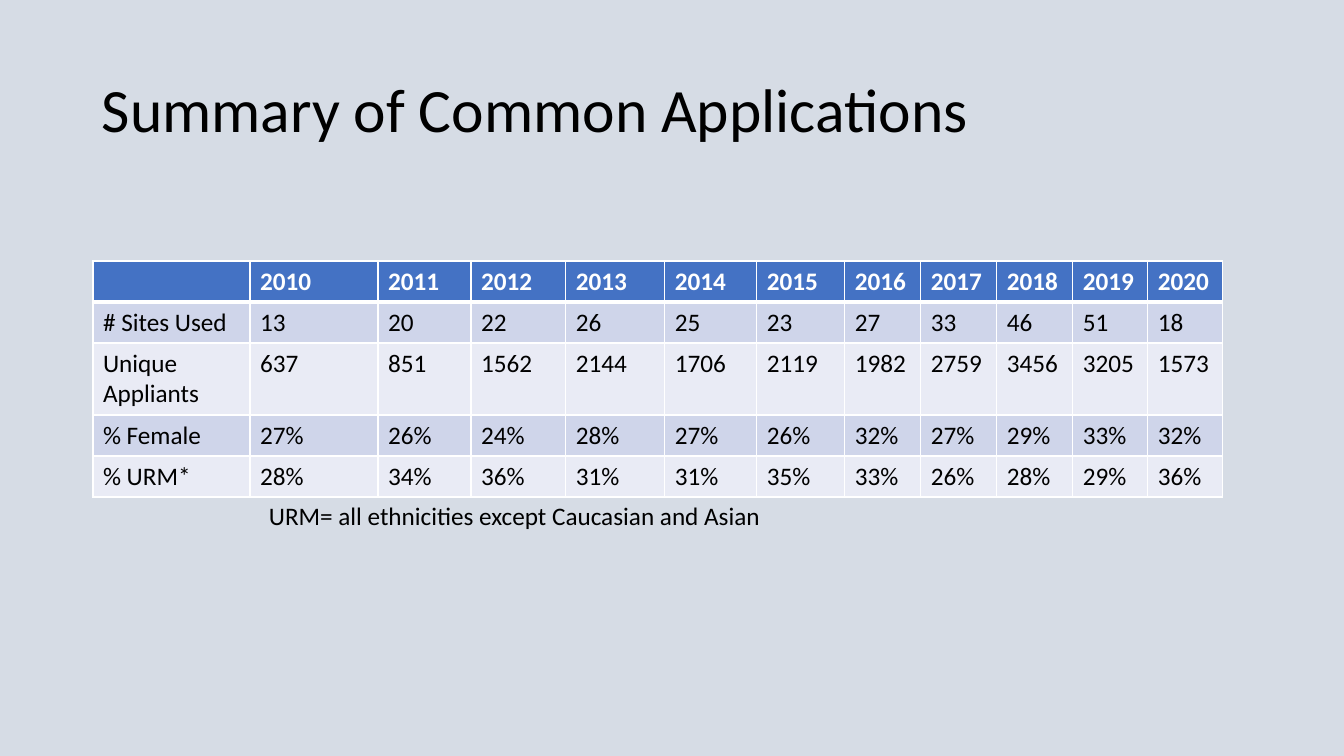
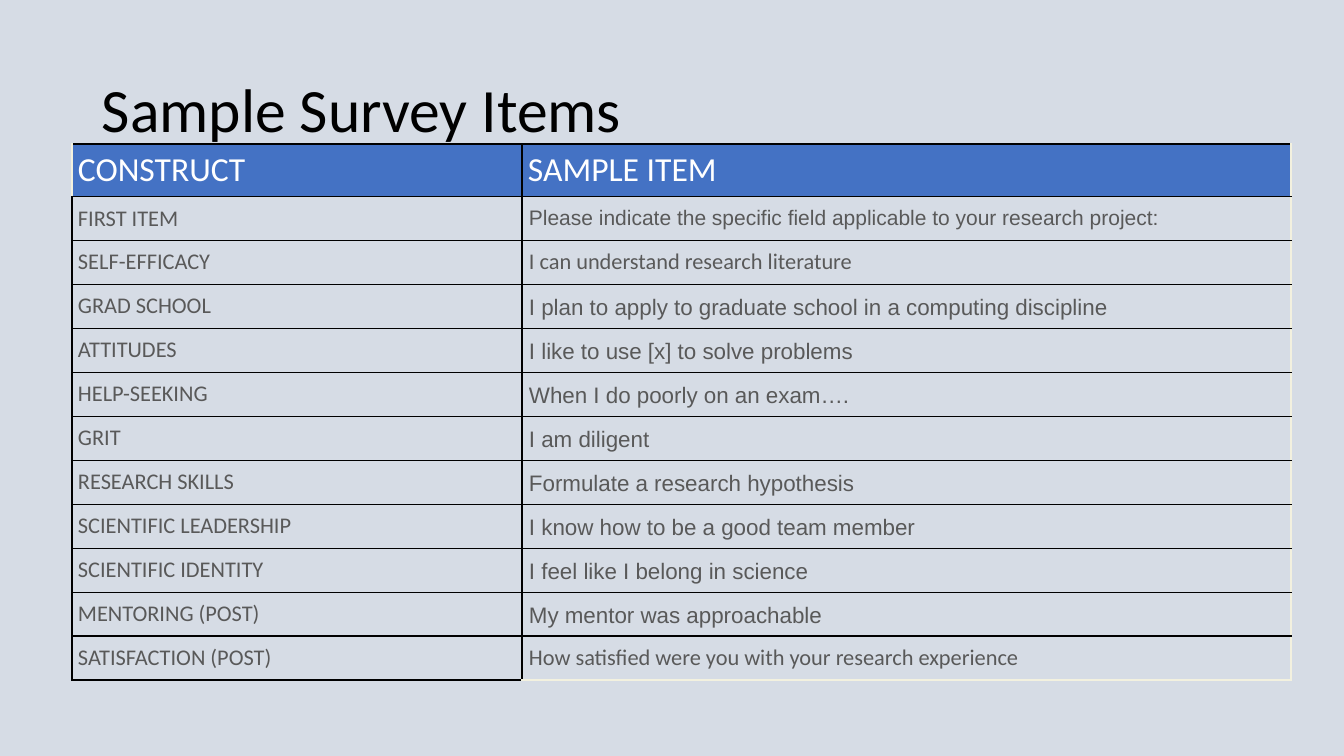
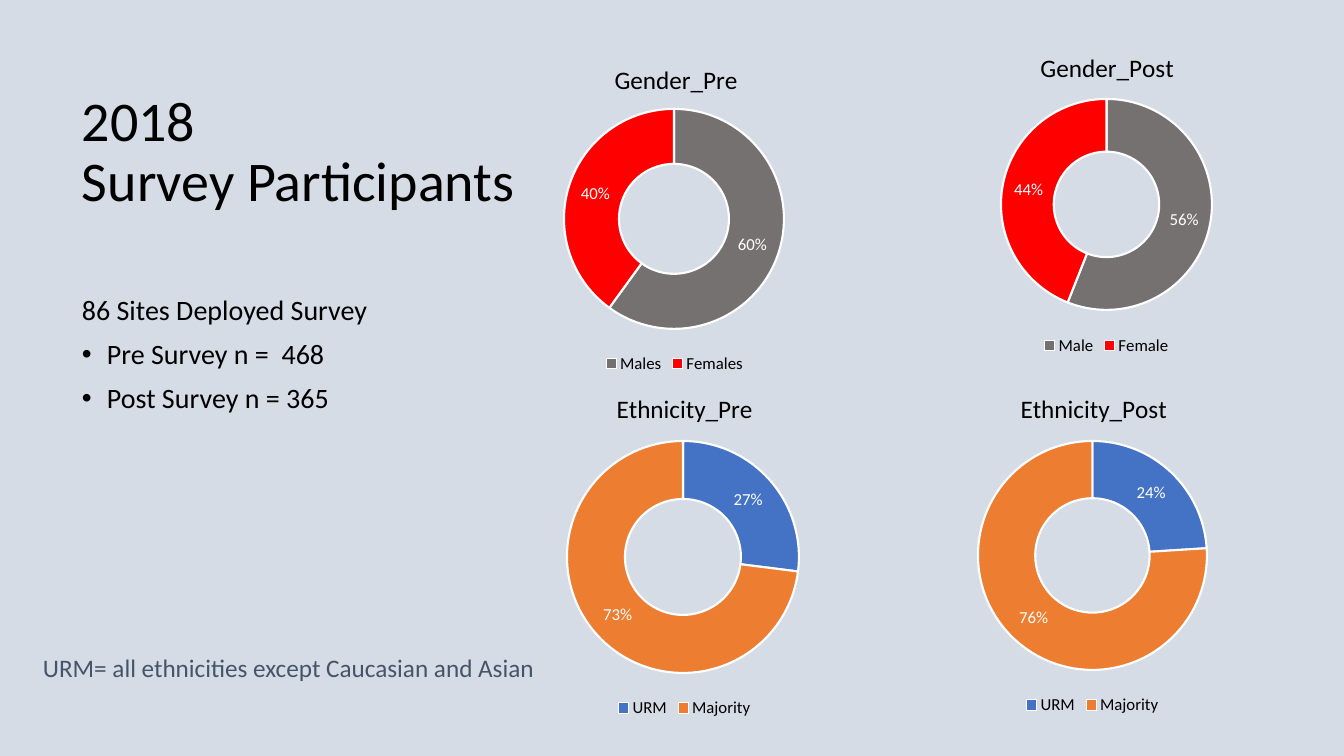
from lxml.etree import SubElement
from pptx import Presentation
from pptx.chart.data import CategoryChartData as ChartData
from pptx.dml.color import RGBColor
from pptx.enum.chart import XL_CHART_TYPE as ChartType, XL_LEGEND_POSITION as LegendPosition
from pptx.enum.text import MSO_ANCHOR as Anchor
from pptx.oxml.ns import qn
from pptx.util import Pt

EMU_PER_PX = 914400 / 100.8
BACKGROUND = RGBColor(0xD6, 0xDC, 0xE5)
BLACK = RGBColor(0, 0, 0)
WHITE = RGBColor(0xFF, 0xFF, 0xFF)
BLUE = RGBColor(0x44, 0x72, 0xC4)
ORANGE = RGBColor(0xED, 0x7D, 0x31)
RED = RGBColor(0xFF, 0, 0)
GRAY = RGBColor(0x76, 0x71, 0x71)
DARK_GRAY = RGBColor(0x59, 0x59, 0x59)
SLATE = RGBColor(0x44, 0x54, 0x6A)
CREAM = RGBColor(0xF3, 0xF1, 0xDF)
BANDS = (RGBColor(0xCF, 0xD5, 0xEA), RGBColor(0xE9, 0xEB, 0xF5))

FONT = "Calibri"
TITLE_BOX = (92, 40, 1159, 146)
URM_NOTE = "URM= all ethnicities except Caucasian and Asian"

SUMMARY_COLUMNS = (157, 128, 93, 95, 99, 92, 88, 76, 76, 76, 75, 75)
SUMMARY_HEIGHTS = (41, 41, 72, 41, 41)
SUMMARY_ROWS = (
    ("", *range(2010, 2021)),
    ("# Sites Used", 13, 20, 22, 26, 25, 23, 27, 33, 46, 51, 18),
    ("Unique Appliants", 637, 851, 1562, 2144, 1706, 2119, 1982, 2759, 3456, 3205, 1573),
    ("% Female", "27%", "26%", "24%", "28%", "27%", "26%", "32%", "27%", "29%", "33%", "32%"),
    ("% URM*", "28%", "34%", "36%", "31%", "31%", "35%", "33%", "26%", "28%", "29%", "36%"),
)

PLAIN = {"size": 16}
ARIAL = {"size": 16, "name": "Arial", "line_spacing": 1.1}
SMALL_ARIAL = {"size": 15, "name": "Arial"}
SURVEY_ITEMS = (
    ("FIRST ITEM", "Please indicate the specific field applicable to your research project:", SMALL_ARIAL),
    ("SELF-EFFICACY", "I can understand research literature", PLAIN),
    ("GRAD SCHOOL", "I plan to apply to graduate school in a computing discipline", ARIAL),
    ("ATTITUDES", "I like to use [x] to solve problems", ARIAL),
    ("HELP-SEEKING", "When I do poorly on an exam….", ARIAL),
    ("GRIT", "I am diligent", ARIAL),
    ("RESEARCH SKILLS", "Formulate a research hypothesis", ARIAL),
    ("SCIENTIFIC LEADERSHIP", "I know how to be a good team member", ARIAL),
    ("SCIENTIFIC IDENTITY", "I feel like I belong in science", ARIAL),
    ("MENTORING (POST)", "My mentor was approachable", ARIAL),
    ("SATISFACTION (POST)", "How satisfied were you with your research experience", PLAIN),
)

GENDER_COLORS = (GRAY, RED)
ETHNICITY_COLORS = (BLUE, ORANGE)
DOUGHNUTS = (
    ("Gender_Pre", (509, 40, 331, 338), (610, 58), (564, 109, 220), ("Males", "Females"), (60, 40), GENDER_COLORS),
    ("Gender_Post", (895, 25, 423, 335), (1036, 46), (1001, 99, 211), ("Male", "Female"), (56, 44), GENDER_COLORS),
    ("Ethnicity_Pre", (446, 366, 477, 356), (612, 387), (567, 441, 232), ("URM", "Majority"), (27, 73), ETHNICITY_COLORS),
    ("Ethnicity_Post", (854, 366, 477, 353), (1016, 387), (978, 441, 229), ("URM", "Majority"), (24, 76), ETHNICITY_COLORS),
)


def px(length):
    return round(length * EMU_PER_PX)


def px_box(box):
    return [px(length) for length in box]


def set_attributes(target, values):
    for name, value in values.items():
        setattr(target, name, value)


def format_font(font, size, color, name=FONT, bold=False):
    set_attributes(font, {"size": Pt(size), "name": name, "bold": bold})
    font.color.rgb = color


def write_paragraph(paragraph, text, size, color, name=FONT, bold=False, **spacing):
    paragraph.text = text
    set_attributes(paragraph, spacing)
    for run in paragraph.runs:
        format_font(run.font, size, color, name, bold)


def add_bullet(paragraph, indent):
    properties = paragraph._p.get_or_add_pPr()
    properties.set("marL", str(px(indent)))
    properties.set("indent", str(-px(indent)))
    SubElement(properties, qn("a:buFont"), typeface="Arial")
    SubElement(properties, qn("a:buChar"), char="•")


def add_text(slide, box, text, size, color=BLACK, anchor=Anchor.TOP, **spacing):
    frame = slide.shapes.add_textbox(*px_box(box)).text_frame
    set_attributes(frame, {"word_wrap": True, "vertical_anchor": anchor})
    write_paragraph(frame.paragraphs[0], text, size, color, **spacing)
    return frame


def add_title(slide, text, box=TITLE_BOX, size=44, anchor=Anchor.MIDDLE):
    add_text(slide, box, text, size, anchor=anchor, line_spacing=0.9)


def add_table(slide, left, top, widths, heights):
    box = px_box((left, top, sum(widths), sum(heights)))
    table = slide.shapes.add_table(len(heights), len(widths), *box).table
    set_attributes(table, {"first_row": False, "horz_banding": False})
    for column, width in zip(table.columns, widths):
        column.width = px(width)
    for row, height in zip(table.rows, heights):
        row.height = px(height)
    return table


def set_borders(cell, **borders):
    properties = cell._tc.get_or_add_tcPr()
    for side in "LRTB":
        color, width = borders[side]
        line = SubElement(properties, qn(f"a:ln{side}"), w=str(Pt(width)))
        fill = SubElement(line, qn("a:solidFill"))
        SubElement(fill, qn("a:srgbClr"), val=str(color))


def set_fill(cell, color):
    if color is None:
        cell.fill.background()
    else:
        cell.fill.solid()
        cell.fill.fore_color.rgb = color


def set_layout(parent, index, chart_box, **places):
    for layout in parent.findall(qn("c:layout")):
        parent.remove(layout)
    layout = SubElement(parent, qn("c:layout"))
    parent.insert(index, layout)
    manual = SubElement(layout, qn("c:manualLayout"))
    if "w" in places:
        SubElement(manual, qn("c:layoutTarget"), val="inner")
    for mode in ("xMode", "yMode"):
        SubElement(manual, qn(f"c:{mode}"), val="edge")
    left, top, width, height = chart_box
    offsets = {"x": left, "y": top, "w": 0, "h": 0}
    spans = {"x": width, "y": height, "w": width, "h": height}
    for key, value in places.items():
        share = (value - offsets[key]) / spans[key]
        SubElement(manual, qn(f"c:{key}"), val=f"{share:.4f}")


def add_doughnut(slide, title, box, title_place, ring, categories, values, colors):
    data = ChartData()
    data.categories = categories
    data.add_series("Series 1", values)
    chart = slide.shapes.add_chart(ChartType.DOUGHNUT, *px_box(box), data).chart
    format_font(chart.font, 10, WHITE)

    chart.has_title = True
    write_paragraph(chart.chart_title.text_frame.paragraphs[0], title, 18, BLACK)
    title_left, title_top = title_place
    set_layout(chart.chart_title._element, 1, box, x=title_left, y=title_top)

    chart.has_legend = True
    set_attributes(chart.legend, {"position": LegendPosition.BOTTOM, "include_in_layout": False})
    format_font(chart.legend.font, 12, BLACK)

    plot = chart.plots[0]
    set_attributes(plot, {"vary_by_categories": True, "has_data_labels": True})
    plot._element.find(qn("c:holeSize")).set("val", "75")
    set_attributes(plot.data_labels, {
        "show_percentage": True, "show_value": False,
        "number_format": "0%", "number_format_is_linked": False,
    })
    format_font(plot.data_labels.font, 12, WHITE)
    for index, color in enumerate(colors):
        style = plot.series[0].points[index].format
        style.fill.solid()
        style.fill.fore_color.rgb = color
        style.line.color.rgb = WHITE
        style.line.width = Pt(1.5)
    left, top, diameter = ring
    set_layout(plot._element.getparent(), 0, box, x=left, y=top, w=diameter, h=diameter)


def build_summary(slide):
    add_title(slide, "Summary of Common Applications")
    table = add_table(slide, 93, 261, SUMMARY_COLUMNS, SUMMARY_HEIGHTS)
    thin, thick = (WHITE, 1), (WHITE, 3)
    for row, values in enumerate(SUMMARY_ROWS):
        header = row == 0
        for column, value in enumerate(values):
            cell = table.cell(row, column)
            set_borders(cell, L=thin, R=thin, T=thick if row == 1 else thin, B=thick if header else thin)
            set_fill(cell, BLUE if header else BANDS[(row - 1) % 2])
            write_paragraph(cell.text_frame.paragraphs[0], str(value), 18,
                            WHITE if header else BLACK, bold=header)
    add_text(slide, (259, 495, 965, 40), URM_NOTE, 18)


def build_survey_items(slide):
    add_title(slide, "Sample Survey Items")
    rows = (("CONSTRUCT", "SAMPLE ITEM", {"size": 24}), *SURVEY_ITEMS)
    table = add_table(slide, 72, 144, (450, 769), (52, *[44] * len(SURVEY_ITEMS)))
    black, cream = (BLACK, 1), (CREAM, 1)
    for row, (construct, item, item_style) in enumerate(rows):
        header, last = row == 0, row == len(rows) - 1
        construct_style = item_style if header else PLAIN
        for column, (text, style) in enumerate(((construct, construct_style), (item, item_style))):
            cell = table.cell(row, column)
            margin = px(7 if column and not header else 6)
            set_attributes(cell, {f"margin_{side}": margin for side in ("left", "right", "top", "bottom")})
            cell.vertical_anchor = Anchor.MIDDLE
            set_borders(cell, L=cream if header and not column else black, R=cream if column else black,
                        T=black, B=cream if last and column else black)
            set_fill(cell, BLUE if header else None)
            write_paragraph(cell.text_frame.paragraphs[0], text,
                            color=WHITE if header else DARK_GRAY, **style)


def build_participants(slide):
    add_title(slide, "2018\vSurvey Participants", (72, 40, 994, 179), 40, Anchor.BOTTOM)
    spacing = {"line_spacing": 0.9, "space_before": Pt(10)}
    frame = add_text(slide, (72, 291, 994, 367), "86 Sites Deployed Survey", 20, **spacing)
    for text in ("Pre Survey n =  468", "Post Survey n = 365"):
        paragraph = frame.add_paragraph()
        write_paragraph(paragraph, text, 20, BLACK, **spacing)
        add_bullet(paragraph, 25)
    for doughnut in DOUGHNUTS:
        add_doughnut(slide, *doughnut)
    add_text(slide, (33, 647, 569, 40), URM_NOTE, 18, SLATE)


def main():
    presentation = Presentation()
    set_attributes(presentation, {"slide_width": px(1344), "slide_height": px(756)})
    background = presentation.slide_master.background.fill
    background.solid()
    background.fore_color.rgb = BACKGROUND
    for build in (build_summary, build_survey_items, build_participants):
        build(presentation.slides.add_slide(presentation.slide_layouts[6]))
    presentation.save("out.pptx")


if __name__ == "__main__":
    main()
